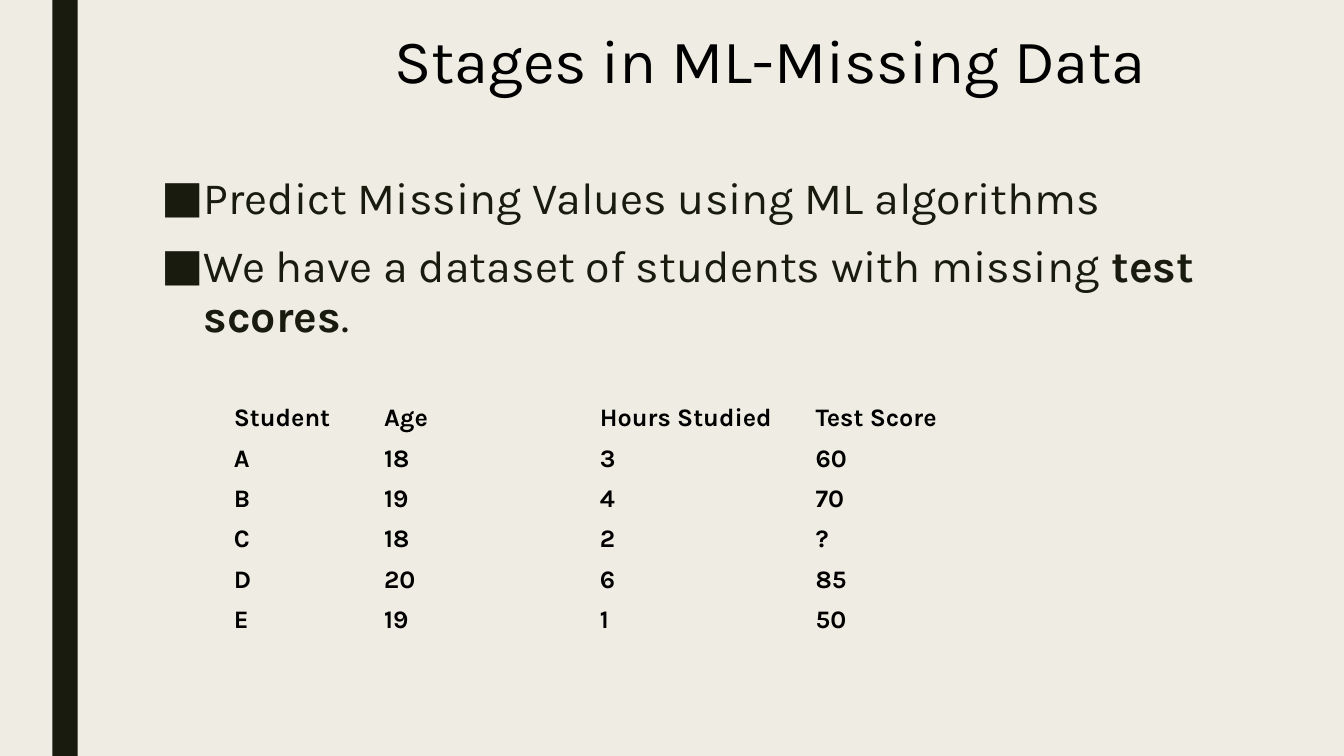
from pptx import Presentation
from pptx.dml.color import RGBColor
from pptx.enum.shapes import MSO_SHAPE
from pptx.enum.text import MSO_ANCHOR
from pptx.util import Inches, Pt
from lxml import etree

RECT = MSO_SHAPE.RECTANGLE
TOP, MIDDLE = MSO_ANCHOR.TOP, MSO_ANCHOR.MIDDLE
FONT = "Karla"
COLORS = {"background": "EFEDE3", "dark": "191B0E", "black": "000000"}
NS = "http://schemas.openxmlformats.org/drawingml/2006/main"


def add_run(p, text, size, color, bold=False):
    r = p.add_run()
    r.text = text
    r.font.name = FONT
    r.font.size = Pt(size)
    r.font.bold = bold
    r.font.color.rgb = RGBColor.from_string(COLORS[color])


def add_textbox(left, top, width, height):
    """Add a wrapping, top-anchored text box and return its text frame."""
    tf = s.shapes.add_textbox(Inches(left), Inches(top), Inches(width), Inches(height)).text_frame
    tf.word_wrap = True
    tf.vertical_anchor = TOP
    return tf


prs = Presentation()
prs.slide_width, prs.slide_height = Inches(13.33), Inches(7.5)
s = prs.slides.add_slide(prs.slide_layouts[6])
s.background.fill.solid()
s.background.fill.fore_color.rgb = RGBColor.from_string(COLORS["background"])

# Side bar
bar = s.shapes.add_shape(RECT, Inches(0.52), 0, Inches(0.25), prs.slide_height)
bar.shadow.inherit = False
bar.fill.solid()
bar.fill.fore_color.rgb = RGBColor.from_string(COLORS["dark"])
bar.line.fill.background()

# Title
p = add_textbox(3.81, 0.26, 10.5, 0.92).paragraphs[0]
p.line_spacing = 0.89
add_run(p, "Stages in ML-Missing Data", 44, "black")

# Bullets: each is a list of (text, bold) runs
bullets = [
    [("Predict Missing Values using ML algorithms", False)],
    [("We have a dataset of students with missing ", False), ("test scores", True), (".", False)],
]
tf = add_textbox(1.5, 1.68, 10.5, 6.57)
for i, runs in enumerate(bullets):
    p = tf.add_paragraph() if i else tf.paragraphs[0]
    p.line_spacing = 0.94
    p.space_before, p.space_after = Pt(10), Pt(2)
    pPr = p._p.get_or_add_pPr()
    pPr.set("marL", str(Inches(0.42)))
    pPr.set("indent", str(Inches(-0.42)))
    etree.SubElement(pPr, f"{{{NS}}}buFont", typeface=FONT)
    etree.SubElement(pPr, f"{{{NS}}}buChar", char="■")
    for text, bold in runs:
        add_run(p, text, 32, "dark", bold)

# Student table
rows = [
    ("Student", "Age", "Hours Studied", "Test Score"),
    ("A", "18", "3", "60"),
    ("B", "19", "4", "70"),
    ("C", "18", "2", "?"),
    ("D", "20", "6", "85"),
    ("E", "19", "1", "50"),
]
col_widths = [1.49, 2.14, 2.14, 2.14]
table = s.shapes.add_table(len(rows), len(col_widths), Inches(2.22), Inches(3.95),
                           Inches(sum(col_widths)), Inches(0.39 * len(rows))).table
table.first_row = table.horz_banding = False
# Built-in style "No Style, No Grid"
table._tbl.tblPr.find(f"{{{NS}}}tableStyleId").text = "{2D5ABB26-0587-4C30-8999-92F81FD0307C}"
for column, width in zip(table.columns, col_widths):
    column.width = Inches(width)
for i, row in enumerate(rows):
    for j, text in enumerate(row):
        cell = table.cell(i, j)
        cell.fill.background()
        cell.vertical_anchor = MIDDLE
        add_run(cell.text_frame.paragraphs[0], text, 18, "black", True)

prs.save("out.pptx")
